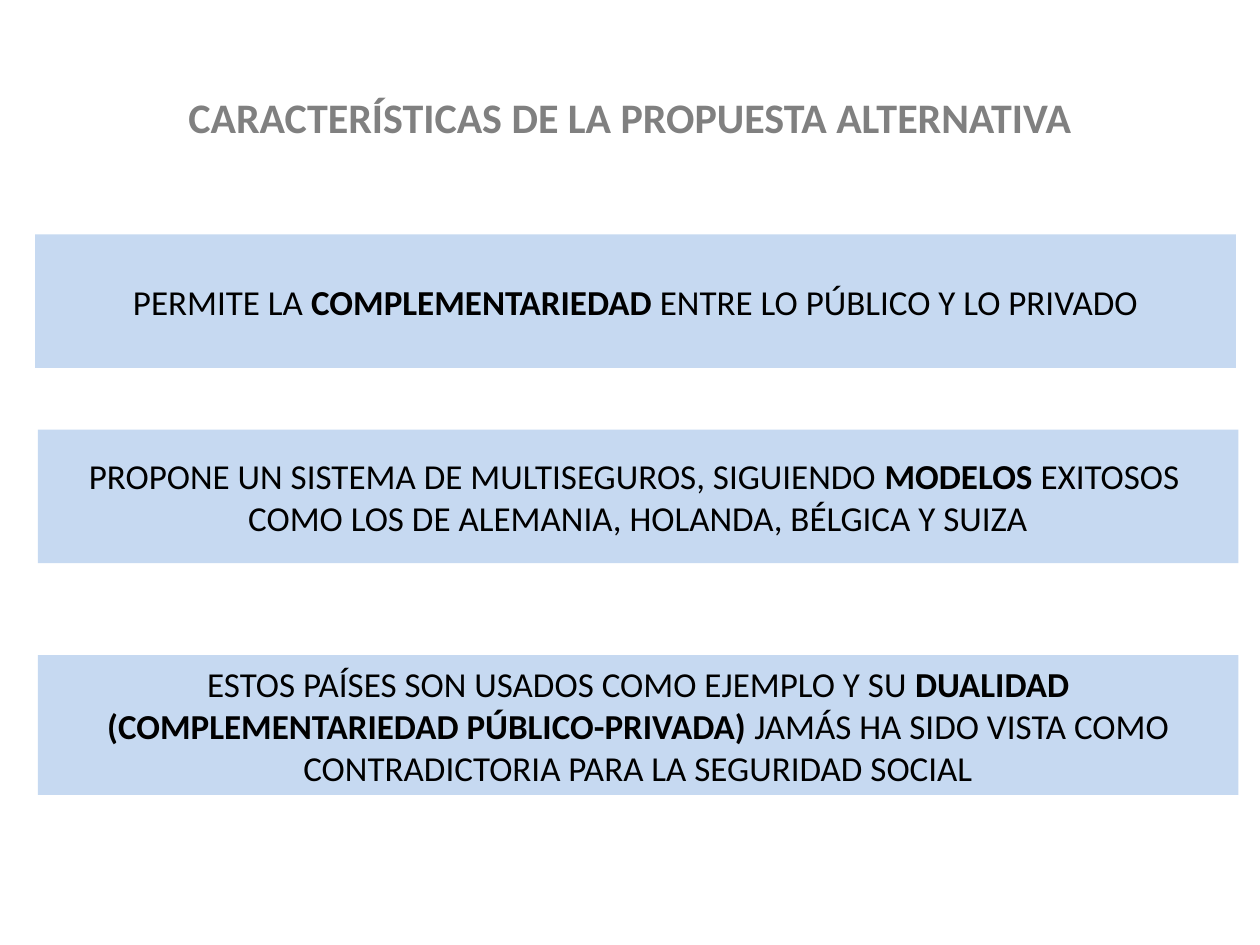
from pptx import Presentation
from pptx.dml.color import RGBColor
from pptx.enum import shapes, text
from pptx.util import Inches, Pt

GRAY = RGBColor(0x80, 0x80, 0x80)
BLACK = RGBColor(0, 0, 0)
LIGHT_BLUE = RGBColor(0xC6, 0xD9, 0xF1)


def add_run(paragraph, words, size, color, bold):
    run = paragraph.add_run()
    run.text = words
    run.font.name = "Calibri"
    run.font.size = Pt(size)
    run.font.bold = bold
    run.font.color.rgb = color


presentation = Presentation()
presentation.slide_width = Inches(10)
presentation.slide_height = Inches(7.5)
slide = presentation.slides.add_slide(presentation.slide_layouts[5])

# Title
title = slide.shapes.title
title.left, title.top = Inches(0.5), Inches(0.3)
title.width, title.height = Inches(9), Inches(1.25)
title.text_frame.vertical_anchor = text.MSO_ANCHOR.MIDDLE
paragraph = title.text_frame.paragraphs[0]
paragraph.alignment = text.PP_ALIGN.CENTER
add_run(paragraph, "CARACTERÍSTICAS DE LA PROPUESTA ALTERNATIVA", 24, GRAY, True)

# Feature boxes: left, top, height, then plain, bold and plain wording
features = [
    (0.28, 1.86, 1.06, ("PERMITE LA ", "COMPLEMENTARIEDAD",
                        " ENTRE LO PÚBLICO Y LO PRIVADO")),
    (0.3, 3.41, 1.06, ("PROPONE UN SISTEMA DE MULTISEGUROS, SIGUIENDO ", "MODELOS ",
                       "EXITOSOS  COMO LOS DE ALEMANIA, HOLANDA, BÉLGICA Y SUIZA")),
    (0.3, 5.2, 1.11, ("ESTOS PAÍSES SON USADOS COMO EJEMPLO Y SU ",
                      "DUALIDAD (COMPLEMENTARIEDAD PÚBLICO-PRIVADA) ",
                      "JAMÁS HA SIDO VISTA COMO CONTRADICTORIA PARA LA SEGURIDAD SOCIAL")),
]
for left, top, height, parts in features:
    shape = slide.shapes.add_shape(shapes.MSO_SHAPE.RECTANGLE, Inches(left), Inches(top),
                                   Inches(9.53), Inches(height))
    shape.shadow.inherit = False
    shape.fill.solid()
    shape.fill.fore_color.rgb = LIGHT_BLUE
    shape.line.fill.background()
    frame = shape.text_frame
    frame.word_wrap = True
    frame.auto_size = text.MSO_AUTO_SIZE.SHAPE_TO_FIT_TEXT
    frame.vertical_anchor = text.MSO_ANCHOR.MIDDLE
    paragraph = frame.paragraphs[0]
    paragraph.alignment = text.PP_ALIGN.CENTER
    for words, bold in zip(parts, (False, True, False)):
        add_run(paragraph, words, 20, BLACK, bold)

presentation.save("out.pptx")
